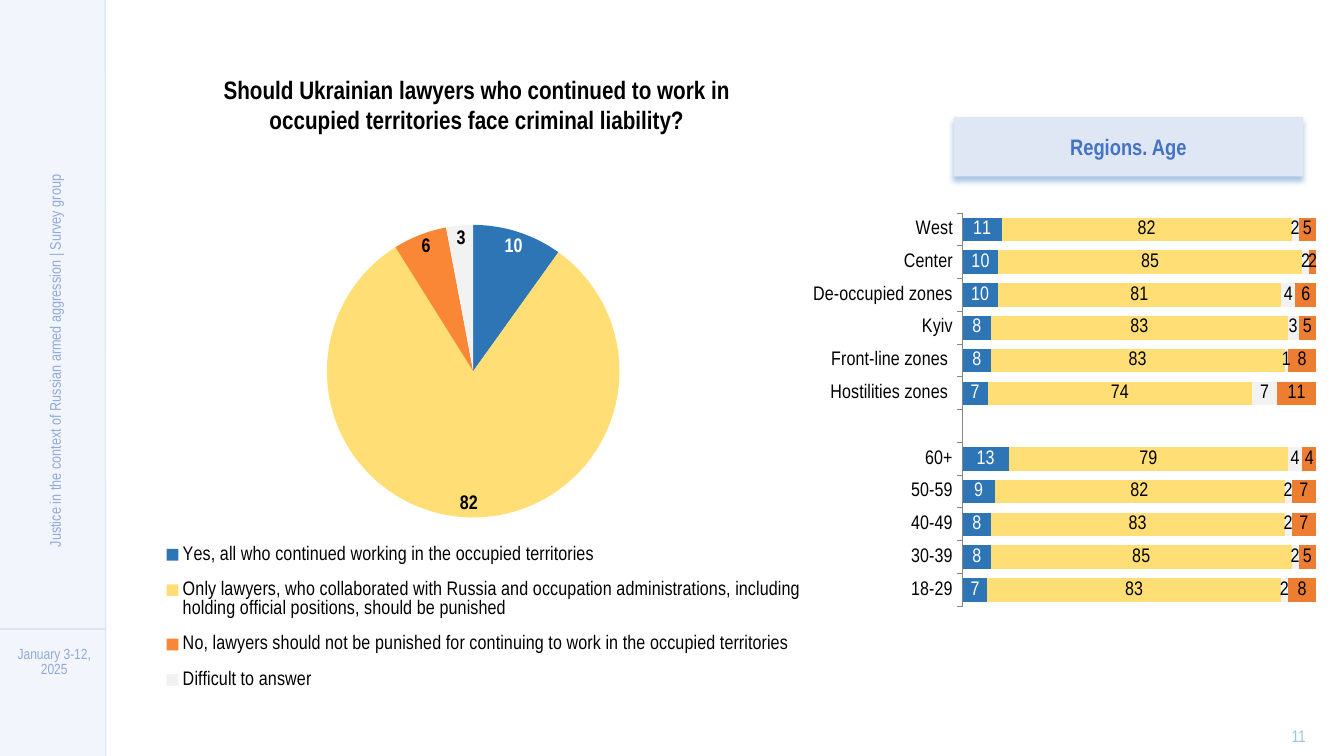
from lxml.etree import SubElement
from pptx import Presentation
from pptx.chart.data import CategoryChartData
from pptx.dml.color import RGBColor
from pptx.enum.chart import (XL_CHART_TYPE, XL_LABEL_POSITION, XL_LEGEND_POSITION,
                             XL_TICK_LABEL_POSITION, XL_TICK_MARK)
from pptx.enum.shapes import MSO_CONNECTOR, MSO_SHAPE
from pptx.enum.text import MSO_ANCHOR, MSO_AUTO_SIZE, PP_ALIGN
from pptx.oxml.ns import qn
from pptx.util import Pt

FONT = "Arial Narrow"
COLORS = {
    "black": "000000", "white": "FFFFFF", "band": "DAE3F3", "edge": "DEEBF7",
    "side_text": "8FAADC", "number": "9DC3E6", "header": "DFE7F5",
    "header_text": "4472C4", "blue": "2E75B6", "yellow": "FFDE75",
    "orange": "FA8736", "dark_orange": "ED7D31", "light": "F2F2F2", "axis": "868686",
}
ANSWERS = [
    ("Yes, all who continued working in the occupied territories", 10, "blue"),
    ("Only lawyers, who collaborated with Russia and occupation administrations, "
     "including holding official positions, should be punished", 82, "yellow"),
    ("No, lawyers should not be punished for continuing to work in the occupied territories",
     6, "orange"),
    ("Difficult to answer", 3, "light"),
]
GROUPS = [
    ("West", 11, 82, 2, 5), ("Center", 10, 85, 2, 2), ("De-occupied zones", 10, 81, 4, 6),
    ("Kyiv", 8, 83, 3, 5), ("Front-line zones ", 8, 83, 1, 8),
    ("Hostilities zones ", 7, 74, 7, 11), ("", None, None, None, None),
    ("60+", 13, 79, 4, 4), ("50-59", 9, 82, 2, 7), ("40-49", 8, 83, 2, 7),
    ("30-39", 8, 85, 2, 5), ("18-29", 7, 83, 2, 8),
]
BAR_COLORS = ["blue", "yellow", "light", "dark_orange"]


def rgb(name):
    """Return the named colour."""
    return RGBColor.from_string(COLORS[name])


def style_font(font, size, color, bold=False):
    """Apply the slide's typeface to a font."""
    font.name, font.size, font.bold = FONT, Pt(size), bold
    font.color.rgb = rgb(color)


def write(sp, text, size, color, bold=False, spacing=None):
    """Put one centred paragraph into a shape."""
    tf = sp.text_frame
    tf.text = text
    tf.word_wrap, tf.auto_size = True, MSO_AUTO_SIZE.NONE
    tf.vertical_anchor = MSO_ANCHOR.MIDDLE
    p = tf.paragraphs[0]
    p.alignment = PP_ALIGN.CENTER
    if spacing:
        p.line_spacing = Pt(spacing)
    style_font(p.runs[0].font, size, color, bold)
    return p


def place(sp, x, y, w, h):
    """Move a shape to a box."""
    sp.left, sp.top, sp.width, sp.height = Pt(x), Pt(y), Pt(w), Pt(h)


def add_panel(s, x, y, w, h, color):
    """Add a plain filled rectangle."""
    sp = s.shapes.add_shape(MSO_SHAPE.RECTANGLE, Pt(x), Pt(y), Pt(w), Pt(h))
    sp.shadow.inherit = False
    sp.fill.solid()
    sp.fill.fore_color.rgb = rgb(color)
    sp.line.fill.background()
    return sp


def add_rule(s, x1, y1, x2, y2, color):
    """Add a thin straight line."""
    line = s.shapes.add_connector(MSO_CONNECTOR.STRAIGHT, Pt(x1), Pt(y1), Pt(x2), Pt(y2))
    line.line.color.rgb, line.line.width = rgb(color), Pt(1)
    SubElement(line.element.spPr, qn("a:effectLst"))


def add_sidebar(s, x, y, w, h):
    """Draw the side band with the study name and date."""
    sp = add_panel(s, x, y, w, h, "band")
    color = sp.element.spPr.find(".//" + qn("a:srgbClr"))
    SubElement(color, qn("a:alpha"), val="33000")
    add_rule(s, x + w, y + 449.3, x, y + 449.3, "band")
    add_rule(s, x + w - 0.5, y, x + w, y + h, "edge")
    date = s.shapes.add_textbox(Pt(x), Pt(y + 462.2), Pt(w + 2), Pt(21.6))
    write(date, "January 3-12, 2025", 10.5, "side_text", spacing=11)
    name = s.shapes.add_textbox(Pt(x - 148.3), Pt(y + 247), Pt(368), Pt(21.6))
    name.rotation = 270
    write(name, "Justice in the context of Russian armed aggression | Survey group",
          11, "side_text", spacing=20)


def add_title(s, x, y, w, h):
    """Fill the title placeholder with the question."""
    place(s.shapes.title, x, y, w, h)
    p = write(s.shapes.title, "Should Ukrainian lawyers who continued to work in "
              "occupied territories face criminal liability?", 18, "black", True)
    p.space_after = Pt(8)
    pPr = p.runs[0]._r.getparent().get_or_add_pPr()
    pPr.set("marL", str(Pt(18)))
    pPr.set("indent", "0")


def add_header(s, x, y, w, h):
    """Add the shadowed heading over the bars."""
    sp = add_panel(s, x, y, w, h, "header")
    write(sp, "Regions. Age", 16, "header_text", True)
    shadow = SubElement(sp.element.spPr.find(qn("a:effectLst")), qn("a:outerShdw"),
                        blurRad=str(Pt(4)), dist=str(Pt(3)), dir="5400000",
                        algn="t", rotWithShape="0")
    color = SubElement(shadow, qn("a:srgbClr"), val=COLORS["blue"])
    SubElement(color, qn("a:alpha"), val="40000")


def set_layout(parent, index, fractions, inner=False):
    """Fix a chart part to fractions of the chart area."""
    for old in parent.findall(qn("c:layout")):
        parent.remove(old)
    layout = SubElement(parent, qn("c:layout"))
    parent.insert(index, layout)
    manual = SubElement(layout, qn("c:manualLayout"))
    if inner:
        SubElement(manual, qn("c:layoutTarget"), val="inner")
    for key in ("xMode", "yMode"):
        SubElement(manual, qn("c:" + key), val="edge")
    for key, value in zip("xywh", fractions):
        SubElement(manual, qn("c:" + key), val=str(value))


def add_chart(s, kind, box, data, plot):
    """Add a chart with the common font and plot position."""
    chart = s.shapes.add_chart(kind, *map(Pt, box), data).chart
    chart.has_title = chart.has_legend = False
    style_font(chart.font, 14, "black")
    set_layout(chart.element.find(".//" + qn("c:plotArea")), 0, plot, True)
    return chart


def add_labels(series, color, position, bold=False):
    """Show whole-number values on a series."""
    labels = series.data_labels
    labels.show_value, labels.position = True, position
    labels.number_format, labels.number_format_is_linked = "0", False
    style_font(labels.font, 14, color, bold)


def add_pie(s, x, y, w, h):
    """Add the pie of all answers with its legend below."""
    data = CategoryChartData(number_format="0")
    data.categories = [answer for answer, _, _ in ANSWERS]
    data.add_series("Series 1", [value for _, value, _ in ANSWERS])
    chart = add_chart(s, XL_CHART_TYPE.PIE, (x, y, w, h), data, (0.29, 0.11, 0.41, 0.55))
    chart.plots[0].vary_by_categories = True
    series = chart.plots[0].series[0]
    add_labels(series, "black", XL_LABEL_POSITION.BEST_FIT, True)
    for i, (_, _, color) in enumerate(ANSWERS):
        fill = series.points[i].format.fill
        fill.solid()
        fill.fore_color.rgb = rgb(color)
    first = series.points[0].data_label
    style_font(first.font, 14, "white", True)
    first.position = XL_LABEL_POSITION.BEST_FIT
    chart.has_legend = True
    chart.legend.position = XL_LEGEND_POSITION.RIGHT
    chart.legend.include_in_layout = False
    style_font(chart.legend.font, 14, "black")
    set_layout(chart.element.find(".//" + qn("c:legend")), 1, (0.04, 0.67, 0.94, 0.32))


def add_bars(s, x, y, w, h):
    """Add the stacked bars by region and age."""
    names, *columns = zip(*GROUPS)
    data = CategoryChartData(number_format="0")
    data.categories = names
    for i, values in enumerate(columns, 1):
        data.add_series(f"Series {i}", values)
    chart = add_chart(s, XL_CHART_TYPE.BAR_STACKED_100, (x, y, w, h), data,
                      (0.45, 0.03, 0.55, 0.94))
    plot = chart.plots[0]
    plot.gap_width, plot.overlap, plot.vary_by_categories = 39, 100, False
    for series, color in zip(plot.series, BAR_COLORS):
        series.format.fill.solid()
        series.format.fill.fore_color.rgb = rgb(color)
        add_labels(series, "white" if color == "blue" else "black", XL_LABEL_POSITION.CENTER)
    axis = chart.category_axis
    axis.reverse_order, axis.has_major_gridlines = True, False
    axis.major_tick_mark = XL_TICK_MARK.OUTSIDE
    axis.tick_label_position = XL_TICK_LABEL_POSITION.LOW
    axis.format.line.color.rgb = rgb("axis")
    chart.value_axis.visible = chart.value_axis.has_major_gridlines = False
    chart.value_axis.major_unit = 0.5


def add_number(s, x, y, w, h):
    """Add the page number."""
    sp = s.shapes.add_textbox(Pt(x), Pt(y), Pt(w), Pt(h))
    write(sp, "11", 12, "number")


def main():
    """Build and save the slide."""
    prs = Presentation()
    prs.slide_width, prs.slide_height = Pt(960), Pt(540)
    s = prs.slides.add_slide(prs.slide_layouts[5])
    add_sidebar(s, 0, 0, 75.6, 540)
    add_number(s, 904.3, 517.7, 46.8, 15.8)
    add_title(s, 121.7, 49, 419.8, 51.1)
    add_pie(s, 85.7, 113, 509.8, 395.3)
    add_header(s, 681.1, 83.5, 249.8, 42.5)
    add_bars(s, 481, 143.3, 460, 298.8)
    prs.save("out.pptx")


if __name__ == "__main__":
    main()
